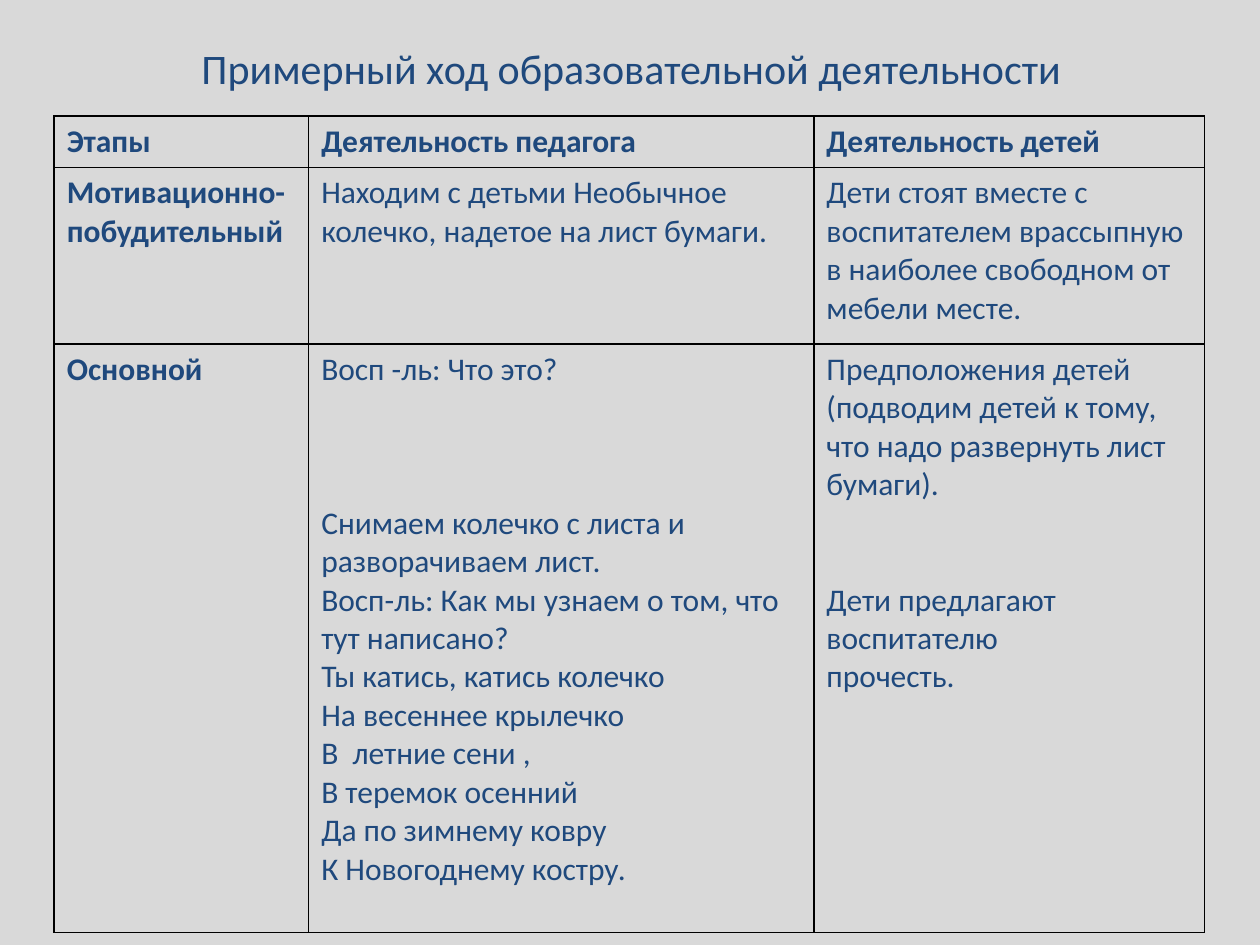
from dataclasses import dataclass
from typing import Any

from lxml.etree import SubElement
from pptx import Presentation
from pptx.dml.color import RGBColor
from pptx.enum.text import MSO_ANCHOR, PP_ALIGN
from pptx.oxml.ns import qn
from pptx.util import Inches, Pt

GREY = RGBColor(0xD9, 0xD9, 0xD9)
NAVY = RGBColor(0x1F, 0x49, 0x7D)
BLACK = RGBColor(0, 0, 0)

COLS, ROWS = 100, 75  # slide grid
LINE = 22  # height of one text line in points


@dataclass
class Deck:
    slide: Any
    width: int
    height: int
    face: str = "Calibri"
    ink: RGBColor = NAVY
    edge: RGBColor = BLACK

    def across(self, cols):
        return round(self.width * cols / COLS)

    def down(self, rows):
        return round(self.height * rows / ROWS)

    def place(self, left, top, wide, high):
        return self.across(left), self.down(top), self.across(wide), self.down(high)

    def text(self, frame, lines, size, bold=False, align=PP_ALIGN.LEFT):
        """Each line is a text, or a pair of text and lines of gap above it."""
        for i, line in enumerate(lines):
            words, gap = line if isinstance(line, tuple) else (line, 0)
            para = frame.paragraphs[0] if i == 0 else frame.add_paragraph()
            para.alignment = align
            para.space_before = Pt(gap * LINE)
            run = para.add_run()
            run.text = words
            style = {"name": self.face, "size": Pt(size), "bold": bold}
            for key, value in style.items():
                setattr(run.font, key, value)
            run.font.color.rgb = self.ink

    def title(self, words, box):
        frame = self.slide.shapes.add_textbox(*self.place(*box)).text_frame
        frame.word_wrap = True
        frame.vertical_anchor = MSO_ANCHOR.TOP
        self.text(frame, [words], 24, align=PP_ALIGN.CENTER)

    def border(self, cell):
        props = cell._tc.get_or_add_tcPr()
        for side in ("lnL", "lnR", "lnT", "lnB"):
            line = SubElement(props, qn(f"a:{side}"), w=str(Pt(1)))
            fill = SubElement(line, qn("a:solidFill"))
            SubElement(fill, qn("a:srgbClr"), val=str(self.edge))

    def table(self, left, top, wides, highs, data):
        box = self.place(left, top, sum(wides), sum(highs))
        table = self.slide.shapes.add_table(len(highs), len(wides), *box).table
        for flag in ("first_row", "horz_banding"):
            setattr(table, flag, False)
        for col, wide in zip(table.columns, wides):
            col.width = self.across(wide)
        for row, high in zip(table.rows, highs):
            row.height = self.down(high)
        for r, row in enumerate(data):
            for c, lines in enumerate(row):
                cell = table.cell(r, c)
                self.border(cell)
                cell.fill.background()
                # Header row and stage names are bold
                self.text(cell.text_frame, lines, 18, bold=r == 0 or c == 0)


STAGES = [
    [["Этапы"], ["Деятельность педагога"], ["Деятельность детей"]],
    [
        ["Мотивационно-побудительный"],
        ["Находим с детьми Необычное колечко, надетое на лист бумаги."],
        ["Дети стоят вместе с воспитателем врассыпную в наиболее "
         "свободном от мебели месте."],
    ],
    [
        ["Основной"],
        [
            "Восп -ль: Что это?",
            ("Снимаем колечко с листа и разворачиваем лист.", 3),
            "Восп-ль: Как мы узнаем о том, что тут написано?",
            "Ты катись, катись колечко",
            "На весеннее крылечко",
            "В  летние сени ,",
            "В теремок осенний",
            "Да по зимнему ковру",
            "К Новогоднему костру.",
        ],
        [
            "Предположения детей (подводим детей к тому, что надо "
            "развернуть лист бумаги).",
            ("Дети предлагают воспитателю", 2),
            "прочесть.",
        ],
    ],
]


def main():
    show = Presentation()
    show.slide_width, show.slide_height = Inches(10), Inches(7.5)
    slide = show.slides.add_slide(show.slide_layouts[6])
    deck = Deck(slide, show.slide_width, show.slide_height)

    # Background
    fill = slide.background.fill
    fill.solid()
    fill.fore_color.rgb = GREY

    # Heading
    deck.title("Примерный ход образовательной деятельности", (5.1, 2.9, 90, 12.5))

    # Table of stages
    deck.table(4.3, 9.2, (20.2, 40.1, 31), (4.1, 14, 46.7), STAGES)

    show.save("out.pptx")


if __name__ == "__main__":
    main()
